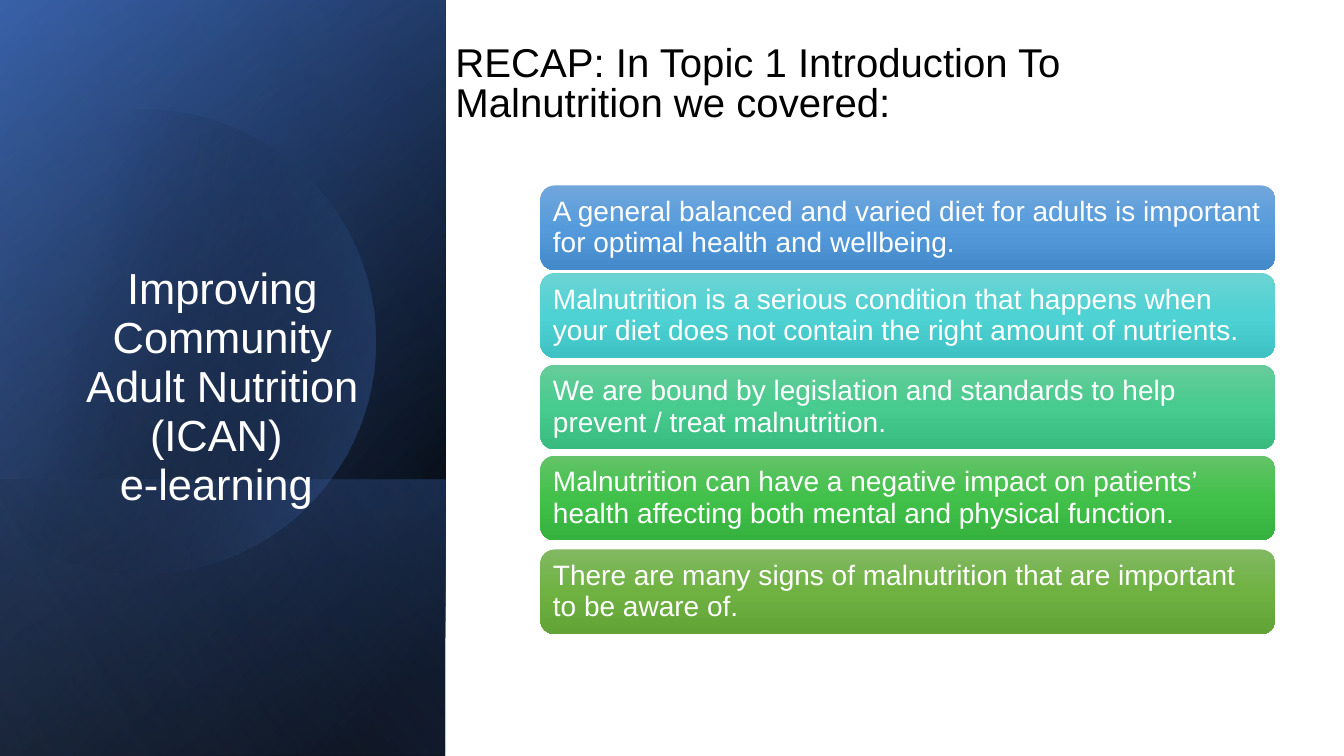
from math import acos, cos, pi, sin

from lxml.etree import SubElement
from pptx import Presentation
from pptx.dml.color import RGBColor
from pptx.enum.shapes import MSO_SHAPE
from pptx.enum.text import MSO_ANCHOR, PP_ALIGN
from pptx.oxml.ns import qn
from pptx.util import Pt

# Content
FONT = "Arial"
COURSE = ["Improving Community Adult Nutrition (ICAN) ", "e-learning "]
HEADING = ["RECAP: In Topic 1 Introduction To Malnutrition we covered:"]

# Top, gradient colours, text
CARDS = [
    (132.5, ("71A6DB", "559BDB", "448ACA"),
     "A general balanced and varied diet for adults is important for optimal health and wellbeing."),
    (195, ("6CD3D3", "4ED2D3", "3EC2C3"),
     "Malnutrition is a serious condition that happens when your diet does not contain the right amount of nutrients."),
    (260.5, ("67CC9A", "47CB8E", "39BB7F"),
     "We are bound by legislation and standards to help prevent / treat malnutrition."),
    (325.5, ("63C368", "42C14A", "34B23D"),
     "Malnutrition can have a negative impact on patients’ health affecting both mental and physical function."),
    (392.5, ("81B861", "6FB242", "62A336"),
     "There are many signs of malnutrition that are important to be aware of."),
]
CARD_LEFT, CARD_W, CARD_H = 386, 525, 60.5

# Side panel layers: top, angle, stops of (position, colour, opacity)
SLIDE_W, SLIDE_H, PANEL_W = 960, 540, 318.25
LAYERS_BELOW = [
    (0, 50, [(8, "000000", 100), (100, "2F5597", 100)]),
    (0, 30, [(0, "000000", 0), (99, "4472C4", 46)]),
    (342.75, 130, [(2, "4472C4", 29), (100, "000000", 30)]),
]
LAYER_ABOVE = (0, 120, [(0, "000000", 0), (99, "8FAADC", 11)])
DISC_X, DISC_Y, DISC_R, DISC_LEFT = 102.5, 244, 165.5, -11
DISC_STOPS = [(29, "000000", 0), (100, "4472C4", 43)]


def rgb(value):
    return RGBColor.from_string(value)


def paint(sp, stops, angle):
    """Give a shape a linear gradient, with no line and no shadow."""
    sp.shadow.inherit = False
    sp.line.fill.background()
    sp.fill.gradient()
    grad = sp.fill._xPr.find(qn("a:gradFill"))
    for child in list(grad):
        grad.remove(child)
    grad.set("rotWithShape", "1")
    gs_list = SubElement(grad, qn("a:gsLst"))
    for position, colour, opacity in stops:
        gs = SubElement(gs_list, qn("a:gs"), pos=str(position * 1000))
        clr = SubElement(gs, qn("a:srgbClr"), val=colour)
        if opacity < 100:
            SubElement(clr, qn("a:alpha"), val=str(opacity * 1000))
    SubElement(grad, qn("a:lin"), ang=str(angle * 60000), scaled="0")


def add_layer(top, angle, stops):
    """Add a panel rectangle, mirrored and turned a quarter."""
    length = SLIDE_H - top
    sp = s.shapes.add_shape(
        MSO_SHAPE.RECTANGLE, Pt((PANEL_W - length) / 2),
        Pt(top + (length - PANEL_W) / 2), Pt(length), Pt(PANEL_W))
    sp.rotation = 90
    sp._element.spPr.find(qn("a:xfrm")).set("flipH", "1")
    paint(sp, stops, angle)


def write(sp, lines, size, colour, spacing, anchor, align=PP_ALIGN.LEFT):
    tf = sp.text_frame
    tf.word_wrap = True
    tf.vertical_anchor = anchor
    p = tf.paragraphs[0]
    p.alignment, p.line_spacing = align, spacing
    for i, line in enumerate(lines):
        if i:
            p.add_line_break()
        r = p.add_run()
        r.text = line
        r.font.name, r.font.size = FONT, Pt(size)
        r.font.color.rgb = rgb(colour)
    return tf


prs = Presentation()
prs.slide_width, prs.slide_height = Pt(SLIDE_W), Pt(SLIDE_H)
s = prs.slides.add_slide(prs.slide_layouts[6])

# Side panel with a disc cut off at the left
for layer in LAYERS_BELOW:
    add_layer(*layer)
half = acos((DISC_LEFT - DISC_X) / DISC_R)
STEPS = 120
angles = [half * (2 * i / STEPS - 1) for i in range(STEPS + 1)]
rim = [(Pt(DISC_X + DISC_R * cos(a)), Pt(DISC_Y + DISC_R * sin(a))) for a in angles]
builder = s.shapes.build_freeform(*rim[0])
builder.add_line_segments(rim[1:], close=True)
paint(builder.convert_to_shape(), DISC_STOPS, 14)
add_layer(*LAYER_ABOVE)

# Course name
course = s.shapes.add_textbox(Pt(36), Pt(179.5), Pt(245.5), Pt(188.5))
write(course, COURSE, 31, "FFFFFF", 0.94, MSO_ANCHOR.BOTTOM, PP_ALIGN.CENTER)

# Recap cards
for top, colours, text in CARDS:
    card = s.shapes.add_shape(MSO_SHAPE.ROUNDED_RECTANGLE, Pt(CARD_LEFT), Pt(top),
                              Pt(CARD_W), Pt(CARD_H))
    paint(card, [(50 * i, c, 100) for i, c in enumerate(colours)], 90)
    tf = write(card, [text], 20, "FFFFFF", 0.93, MSO_ANCHOR.MIDDLE)
    tf.margin_left = tf.margin_right = tf.margin_top = tf.margin_bottom = Pt(6)

# Heading
heading = s.shapes.add_textbox(Pt(318.25), Pt(24.5), Pt(505.5), Pt(68.5))
write(heading, HEADING, 28.7, "000000", 0.82, MSO_ANCHOR.BOTTOM)

prs.save("out.pptx")
